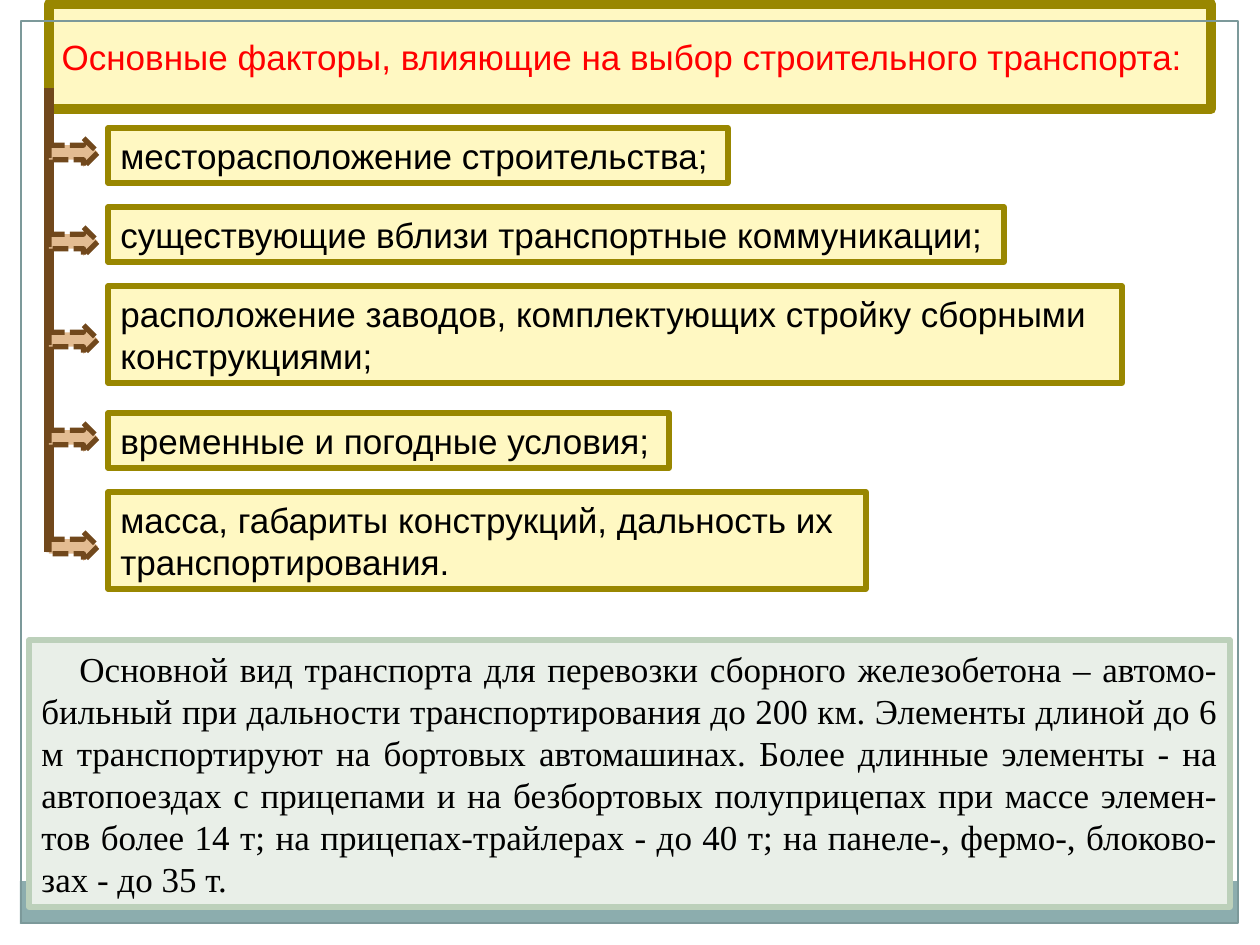
from pptx import Presentation
from pptx.dml.color import RGBColor
from pptx.enum.dml import MSO_LINE_DASH_STYLE as Dash
from pptx.enum.shapes import MSO_CONNECTOR as Connector, MSO_SHAPE as Shape
from pptx.enum.text import MSO_ANCHOR as Anchor, MSO_AUTO_SIZE as AutoSize, PP_ALIGN as Align
from pptx.oxml.ns import qn
from pptx.util import Emu, Pt
from lxml.etree import SubElement

COLORS = {
    "band": "8CADAE", "frame": "7C999A",
    "cream": "FFF8C2", "olive": "998700",
    "sand": "E3BC92", "brown": "71481C",
    "mist": "E9EFE8", "sage": "BCD0BA",
    "red": "FF0000", "black": "000000",
}
SCALE = 914400 / 126


def px(*lengths):
    return [Emu(round(length * SCALE)) for length in lengths]


def style(box, fill=None, line=None, width=0, text="", color="black", font="Arial",
          anchor=Anchor.TOP, align=Align.LEFT, indent=0):
    """Format a box and, if text is given, write it as one paragraph."""
    if fill:
        box.fill.solid()
        box.fill.fore_color.rgb = RGBColor.from_string(COLORS[fill])
    else:
        box.fill.background()
    if line:
        box.line.color.rgb = RGBColor.from_string(COLORS[line])
        box.line.width = Pt(width)
    else:
        box.line.fill.background()
    if not text:
        return
    frame = box.text_frame
    frame.word_wrap = True
    frame.auto_size = AutoSize.SHAPE_TO_FIT_TEXT
    frame.vertical_anchor = anchor
    para = frame.paragraphs[0]
    para.alignment = align
    if indent:
        properties = para._p.get_or_add_pPr()
        properties.set("marL", "0")
        properties.set("indent", str(px(indent)[0]))
    span = para.add_run()
    span.text = text
    span.font.name = font
    span.font.size = Pt(20)
    span.font.color.rgb = RGBColor.from_string(COLORS[color])


deck = Presentation()
deck.slide_width, deck.slide_height = px(1260, 945)
page = deck.slides.add_slide(deck.slide_layouts[5])
shapes = page.shapes

# Bottom band and page frame
band = shapes.add_shape(Shape.RECTANGLE, *px(20, 881, 1218, 43))
band.shadow.inherit = False
style(band, fill="band")
border = shapes.add_shape(Shape.RECTANGLE, *px(21, 21, 1217, 902))
border.shadow.inherit = False
style(border, line="frame", width=0.75)

# Title
title = shapes.title
title.left, title.top, title.width, title.height = px(49, 29, 1162, 55)
style(title, fill="cream", line="olive", width=6, color="red", anchor=Anchor.MIDDLE,
      text="Основные факторы, влияющие на выбор строительного транспорта:")

# Factors: text, top, width, height
factors = [
    ("месторасположение строительства;", 128, 620, 55),
    ("существующие вблизи транспортные коммуникации;", 207, 896, 55),
    ("расположение заводов, комплектующих стройку сборными конструкциями;", 286, 1014, 97),
    ("временные и погодные условия;", 413, 561, 55),
    ("масса, габариты конструкций, дальность их транспортирования.", 492, 758, 97),
]
for text, top, width, height in factors:
    box = shapes.add_shape(Shape.RECTANGLE, *px(108, top, width, height))
    box.shadow.inherit = False
    style(box, fill="cream", line="olive", width=3, text=text)

# Trunk line
trunk = shapes.add_connector(Connector.STRAIGHT, *px(49, 88, 49, 552))
trunk.line.color.rgb = RGBColor.from_string(COLORS["brown"])
trunk.line.width = Pt(6)
SubElement(trunk._element.spPr, qn("a:effectLst"))

# Arrows from the trunk to the factors
for top in (138, 227, 325, 423, 532):
    arrow = shapes.add_shape(Shape.RIGHT_ARROW, *px(49, top, 49, 29))
    arrow.shadow.inherit = False
    style(arrow, fill="sand", line="brown", width=3)
    arrow.line.dash_style = Dash.SQUARE_DOT

# Summary
summary = shapes.add_shape(Shape.RECTANGLE, *px(29, 640, 1201, 267))
summary.shadow.inherit = False
style(summary, fill="mist", line="sage", width=3, font="Times New Roman",
      anchor=Anchor.MIDDLE, align=Align.JUSTIFY, indent=38,
      text="Основной вид транспорта для перевозки сборного железобетона – автомо-бильный "
           "при дальности транспортирования до 200 км. Элементы длиной до 6 м транспортируют "
           "на бортовых автомашинах. Более длинные элементы - на автопоездах с прицепами и на "
           "безбортовых полуприцепах при массе элемен-тов более 14 т; на прицепах-трайлерах - "
           "до 40 т; на панеле-, фермо-, блоково-зах - до 35 т.")

deck.save("out.pptx")
